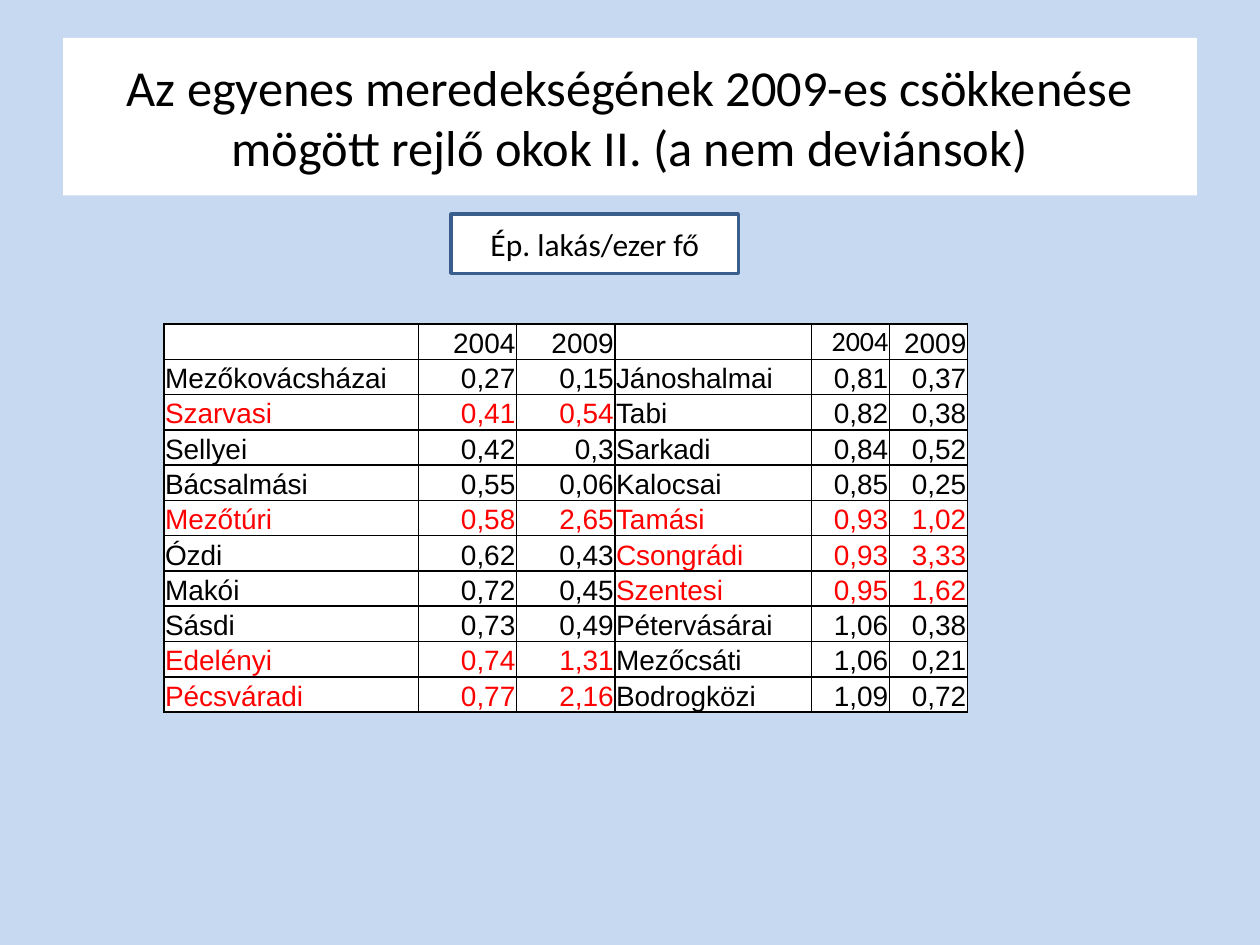
from lxml.etree import SubElement
from pptx import Presentation
from pptx.dml.color import RGBColor
from pptx.enum.shapes import MSO_SHAPE as Shape
from pptx.enum.text import MSO_ANCHOR as Anchor, MSO_AUTO_SIZE as Fit, PP_ALIGN as Align
from pptx.oxml.ns import qn
from pptx.util import Inches, Pt

COLORS = {"sky": "C6D9F1", "white": "FFFFFF", "black": "000000",
          "red": "FF0000", "blue": "3A5F8C"}
HEAD = ["", "2004", "2009"]
LEFT = [
    ("Mezőkovácsházai", "0,27", "0,15"), ("Szarvasi", "0,41", "0,54"),
    ("Sellyei", "0,42", "0,3"), ("Bácsalmási", "0,55", "0,06"),
    ("Mezőtúri", "0,58", "2,65"), ("Ózdi", "0,62", "0,43"),
    ("Makói", "0,72", "0,45"), ("Sásdi", "0,73", "0,49"),
    ("Edelényi", "0,74", "1,31"), ("Pécsváradi", "0,77", "2,16"),
]
RIGHT = [
    ("Jánoshalmai", "0,81", "0,37"), ("Tabi", "0,82", "0,38"),
    ("Sarkadi", "0,84", "0,52"), ("Kalocsai", "0,85", "0,25"),
    ("Tamási", "0,93", "1,02"), ("Csongrádi", "0,93", "3,33"),
    ("Szentesi", "0,95", "1,62"), ("Pétervásárai", "1,06", "0,38"),
    ("Mezőcsáti", "1,06", "0,21"), ("Bodrogközi", "1,09", "0,72"),
]
WIDTHS = [2.02, 0.78, 0.78, 1.56, 0.62, 0.62]
ROW = 0.28


def rgb(name):
    return RGBColor.from_string(COLORS[name])


def put(frame, text, size=16, font="Arial", color="black",
        align=Align.CENTER, anchor=Anchor.MIDDLE):
    frame.word_wrap = True
    frame.vertical_anchor = anchor
    para = frame.paragraphs[0]
    para.alignment = align
    if not text:
        # An empty cell keeps its row low only if its end mark has a size
        SubElement(para._p, qn("a:endParaRPr"), sz=str(size * 100))
        return
    run = para.add_run()
    run.text = text
    run.font.size = Pt(size)
    run.font.name = font
    run.font.color.rgb = rgb(color)


prs = Presentation()
prs.slide_width, prs.slide_height = Inches(10), Inches(7.5)
slide = prs.slides.add_slide(prs.slide_layouts[5])
slide.background.fill.solid()
slide.background.fill.fore_color.rgb = rgb("sky")

title = slide.shapes.title
title.left, title.top = Inches(0.5), Inches(0.3)
title.width, title.height = Inches(9), Inches(1.25)
title.fill.solid()
title.fill.fore_color.rgb = rgb("white")
title.text_frame.auto_size = Fit.NONE
put(title.text_frame, "Az egyenes meredekségének 2009-es csökkenése "
    "mögött rejlő okok II. (a nem deviánsok)", size=28.8, font="Calibri")

label = slide.shapes.add_shape(Shape.RECTANGLE, Inches(3.58), Inches(1.7),
                               Inches(2.28), Inches(0.47))
label.shadow.inherit = False
label.fill.solid()
label.fill.fore_color.rgb = rgb("white")
label.line.color.rgb = rgb("blue")
label.line.width = Pt(2)
put(label.text_frame, "Ép. lakás/ezer fő", size=18, font="Calibri")

rows = [HEAD + HEAD] + [a + b for a, b in zip(LEFT, RIGHT)]
table = slide.shapes.add_table(len(rows), len(WIDTHS), Inches(1.3), Inches(2.57),
                               Inches(sum(WIDTHS)), Inches(ROW * len(rows))).table
for col, width in zip(table.columns, WIDTHS):
    col.width = Inches(width)

for r, row in enumerate(rows):
    table.rows[r].height = Inches(ROW)
    for c, text in enumerate(row):
        cell = table.cell(r, c)
        cell.margin_left = cell.margin_right = cell.margin_top = Inches(0.01)
        cell.margin_bottom = 0
        cell.vertical_anchor = Anchor.BOTTOM

        # Districts whose value rose from 2004 to 2009 are red
        first = c - c % 3
        old, new = (float(v.replace(",", ".")) for v in row[first + 1:first + 3])
        rose = r > 0 and new > old
        put(cell.text_frame, text, color="red" if rose else "black",
            font="Calibri" if (r, c) == (0, 4) else "Arial",
            align=Align.RIGHT if c % 3 else Align.LEFT, anchor=Anchor.BOTTOM)

        props = cell._tc.get_or_add_tcPr()
        for side in ("lnL", "lnR", "lnT", "lnB"):
            line = SubElement(props, qn(f"a:{side}"), w=str(Pt(1)))
            paint = SubElement(line, qn("a:solidFill"))
            SubElement(paint, qn("a:srgbClr"), val=COLORS["black"])
        cell.fill.solid()
        cell.fill.fore_color.rgb = rgb("white")

prs.save("out.pptx")
